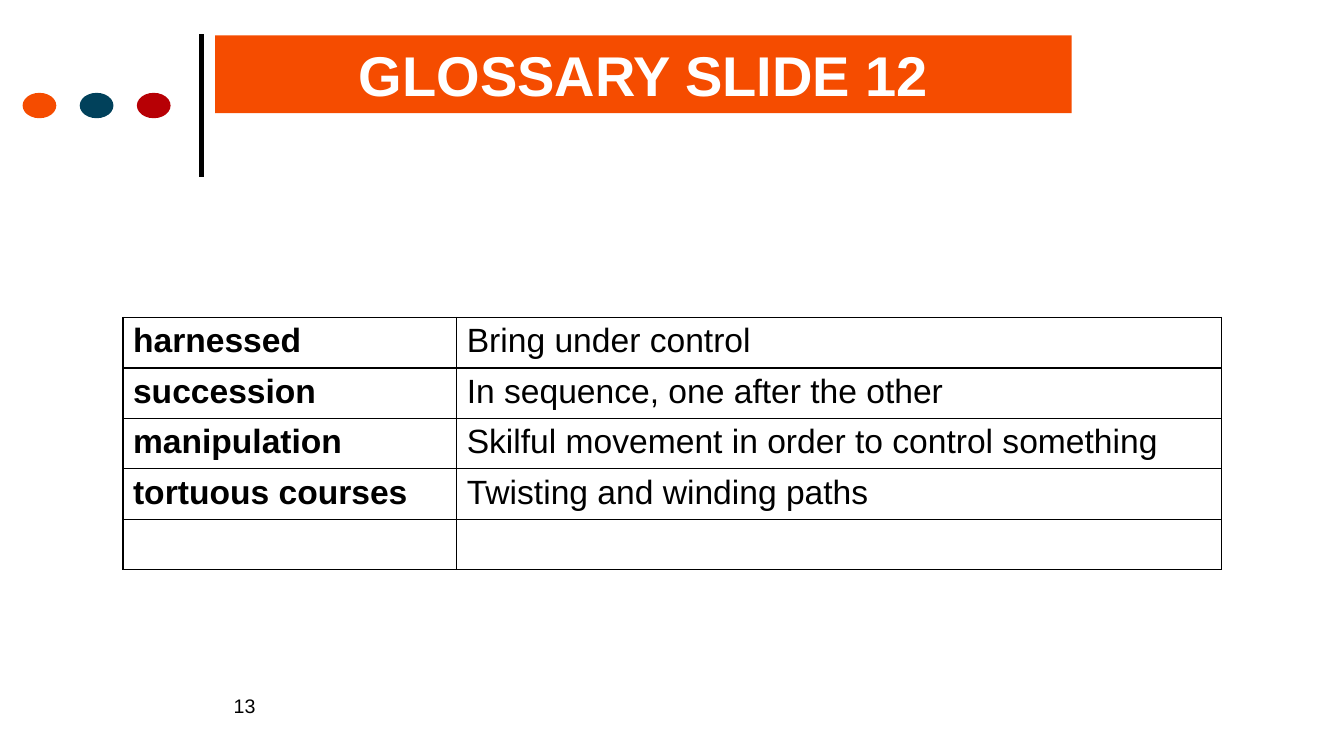
from pptx import Presentation
from pptx.dml.color import RGBColor
from pptx.enum.shapes import MSO_CONNECTOR, MSO_SHAPE
from pptx.enum.text import MSO_ANCHOR, PP_ALIGN
from pptx.oxml import parse_xml
from pptx.oxml.ns import nsdecls
from pptx.util import Cm, Pt

BLACK, WHITE, ORANGE, BLUE, RED = "000000", "FFFFFF", "F54C00", "01415B", "B70005"


def color(value):
    return RGBColor.from_string(value)


def write(frame, text, size, bold=False, ink=BLACK):
    frame.text = text
    font = frame.paragraphs[0].runs[0].font
    font.name, font.size, font.bold = "Arial", Pt(size), bold
    font.color.rgb = color(ink)


deck = Presentation()
deck.slide_width, deck.slide_height = Cm(33.87), Cm(19.05)
page = deck.slides.add_slide(deck.slide_layouts[6])

# Vertical rule beside the title
rule = page.shapes.add_connector(
    MSO_CONNECTOR.STRAIGHT, Cm(5.08), Cm(4.45), Cm(5.08), Cm(0.85))
rule.line.color.rgb = color(BLACK)
rule.line.width = Pt(3)
rule._element.spPr.append(parse_xml(f"<a:effectLst {nsdecls('a')}/>"))

# Three dots
for index, fill in enumerate((ORANGE, BLUE, RED)):
    dot = page.shapes.add_shape(
        MSO_SHAPE.OVAL, Cm(0.57 + 1.44 * index), Cm(2.34), Cm(0.85), Cm(0.64))
    dot.shadow.inherit = False
    dot.fill.solid()
    dot.fill.fore_color.rgb = color(fill)
    dot.line.fill.background()

# Slide number
number = page.shapes.add_textbox(Cm(5.64), Cm(17.35), Cm(4.8), Cm(1.27))
number.text_frame.word_wrap = True
write(number.text_frame, "13", 14)

# Glossary table
glossary = [
    ("harnessed", "Bring under control"),
    ("succession", "In sequence, one after the other"),
    ("manipulation", "Skilful movement in order to control something"),
    ("tortuous courses", "Twisting and winding paths"),
    ("", ""),
]
table = page.shapes.add_table(
    len(glossary), 2, Cm(3.1), Cm(8), Cm(27.69), Cm(6.35)).table
table.first_row = table.horz_banding = False
table.columns[0].width, table.columns[1].width = Cm(8.41), Cm(19.28)
for row, entry in enumerate(glossary):
    for column, text in enumerate(entry):
        cell = table.cell(row, column)
        if text:
            write(cell.text_frame, text, 24, bold=column == 0)
        for side in ("lnL", "lnR", "lnT", "lnB"):
            cell._tc.get_or_add_tcPr().append(parse_xml(
                f'<a:{side} {nsdecls("a")} w="12700"><a:solidFill>'
                f'<a:srgbClr val="{BLACK}"/></a:solidFill></a:{side}>'))
        cell.fill.background()

# Title banner
banner = page.shapes.add_shape(
    MSO_SHAPE.RECTANGLE, Cm(5.42), Cm(0.89), Cm(21.59), Cm(1.96))
banner.shadow.inherit = False
banner.fill.solid()
banner.fill.fore_color.rgb = color(ORANGE)
banner.line.fill.background()
banner.text_frame.word_wrap = True
banner.text_frame.vertical_anchor = MSO_ANCHOR.TOP
write(banner.text_frame, "GLOSSARY SLIDE 12", 40, bold=True, ink=WHITE)
banner.text_frame.paragraphs[0].alignment = PP_ALIGN.CENTER

deck.save("out.pptx")
